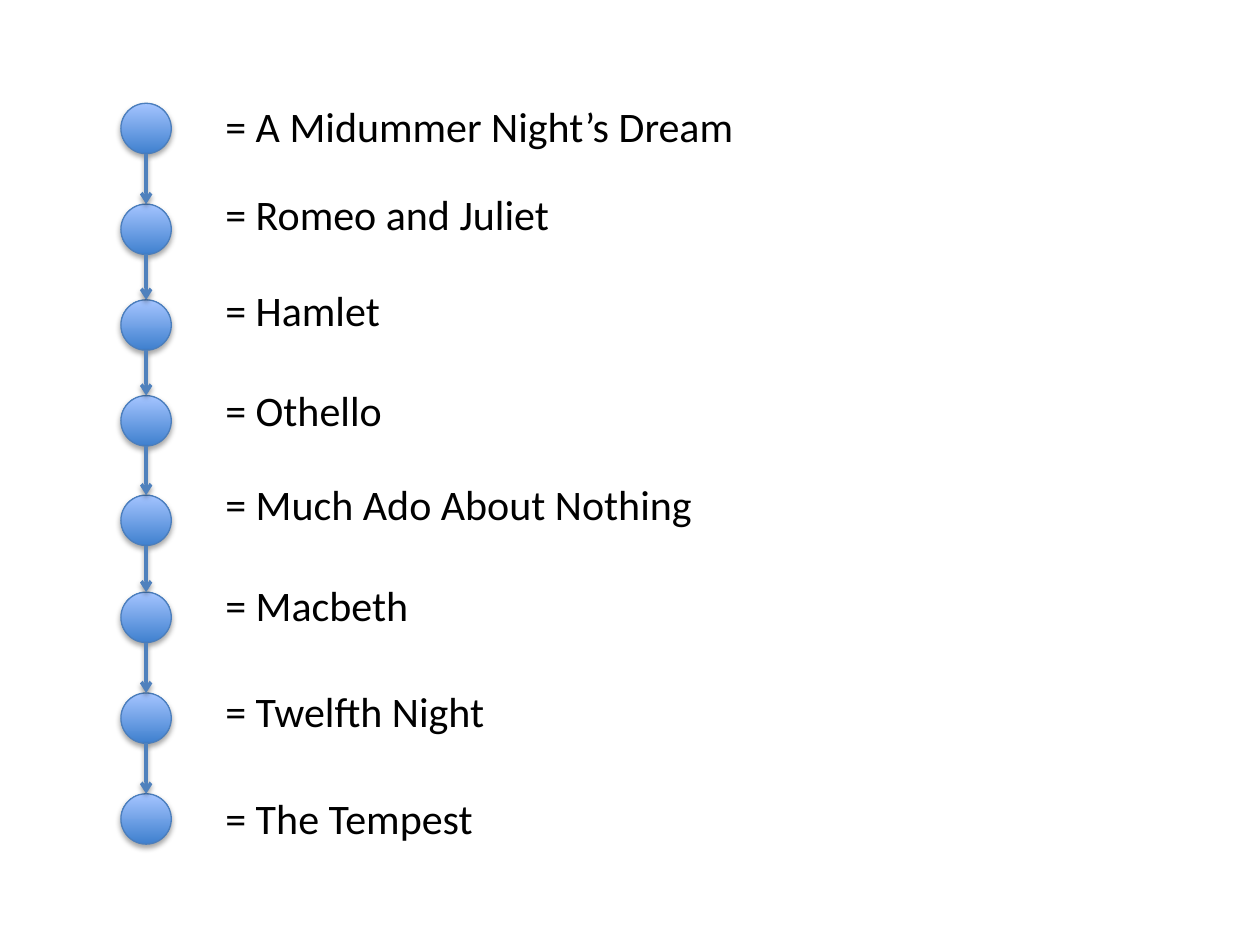
"""Build a slide with a chain of eight plays, one node and one label each."""
from dataclasses import dataclass
from itertools import pairwise

from lxml import etree
from pptx import Presentation
from pptx import util as u
from pptx.dml.color import RGBColor
from pptx.enum import shapes, text
from pptx.oxml.ns import qn

PX = u.Inches(1) // 100
NODE_LEFT, NODE_SIZE = 96, 40
LABEL_LEFT, LABEL_HEIGHT = 169, 50
FONT = "Calibri"
BLACK = RGBColor(0x00, 0x00, 0x00)
NODE_DARK = RGBColor(0x3F, 0x80, 0xCE)
NODE_LIGHT = RGBColor(0xA4, 0xC4, 0xFF)
NODE_EDGE = RGBColor(0x4B, 0x7E, 0xBC)
ARROW = RGBColor(0x4F, 0x81, 0xBD)


@dataclass(frozen=True)
class Play:
    title: str
    node_top: int
    label_top: int
    label_width: int
    wrap: bool = False


PLAYS = [
    Play("A Midummer Night’s Dream", 82, 75, 471, wrap=True),
    Play("Romeo and Juliet", 162, 145, 280),
    Play("Hamlet", 238, 221, 144),
    Play("Othello", 314, 300, 146),
    Play("Much Ado About Nothing", 393, 375, 394),
    Play("Macbeth", 470, 455, 167),
    Play("Twelfth Night", 550, 539, 228),
    Play("The Tempest", 630, 624, 219),
]


def add_shadow(sp, alpha: int, dist: float) -> None:
    """Give a shape or connector a soft shadow that falls downwards."""
    effects = etree.SubElement(sp._element.spPr, qn("a:effectLst"))
    shadow = etree.SubElement(
        effects, qn("a:outerShdw"), blurRad=str(u.Pt(3.1)), dist=str(u.Pt(dist)),
        dir="5400000", rotWithShape="0")
    color = etree.SubElement(shadow, qn("a:srgbClr"), val=str(BLACK))
    etree.SubElement(color, qn("a:alpha"), val=str(alpha * 1000))


def add_node(s, play: Play) -> None:
    """Draw the shaded circle of one play."""
    sp = s.shapes.add_shape(
        shapes.MSO_SHAPE.OVAL, NODE_LEFT * PX, play.node_top * PX,
        NODE_SIZE * PX, NODE_SIZE * PX)
    sp.fill.gradient()
    sp.fill.gradient_angle = 90
    for stop, color in zip(sp.fill.gradient_stops, (NODE_DARK, NODE_LIGHT)):
        stop.color.rgb = color
    sp.line.color.rgb = NODE_EDGE
    sp.line.width = u.Pt(0.75)
    add_shadow(sp, alpha=35, dist=1.8)


def add_arrow(s, start: Play, end: Play) -> None:
    """Draw the arrow from one node down to the next."""
    x = (NODE_LEFT + NODE_SIZE // 2) * PX
    sp = s.shapes.add_connector(
        shapes.MSO_CONNECTOR.STRAIGHT, x, (start.node_top + NODE_SIZE) * PX,
        x, end.node_top * PX)
    sp.line.color.rgb = ARROW
    sp.line.width = u.Pt(2)
    etree.SubElement(sp.line._get_or_add_ln(), qn("a:tailEnd"), type="arrow")
    add_shadow(sp, alpha=38, dist=1.6)


def add_text(s, content: str, *, left: int, top: int, width: int, height: int,
             wrap: bool = False, size: int = 24, color: RGBColor = BLACK) -> None:
    """Add a one-paragraph text box."""
    sp = s.shapes.add_textbox(left * PX, top * PX, width * PX, height * PX)
    tf = sp.text_frame
    tf.word_wrap = wrap
    tf.auto_size = text.MSO_AUTO_SIZE.SHAPE_TO_FIT_TEXT
    r = tf.paragraphs[0].add_run()
    r.text = content
    r.font.name = FONT
    r.font.size = u.Pt(size)
    r.font.color.rgb = color


def main() -> None:
    """Draw nodes, arrows and labels, then save."""
    prs = Presentation()
    prs.slide_width, prs.slide_height = 1000 * PX, 750 * PX
    s = prs.slides.add_slide(prs.slide_layouts[6])
    for play in PLAYS:
        add_node(s, play)
    for start, end in pairwise(PLAYS):
        add_arrow(s, start, end)
    for play in PLAYS:
        add_text(s, f"= {play.title}", left=LABEL_LEFT, top=play.label_top,
                 width=play.label_width, height=LABEL_HEIGHT, wrap=play.wrap)
    prs.save("out.pptx")


if __name__ == "__main__":
    main()
